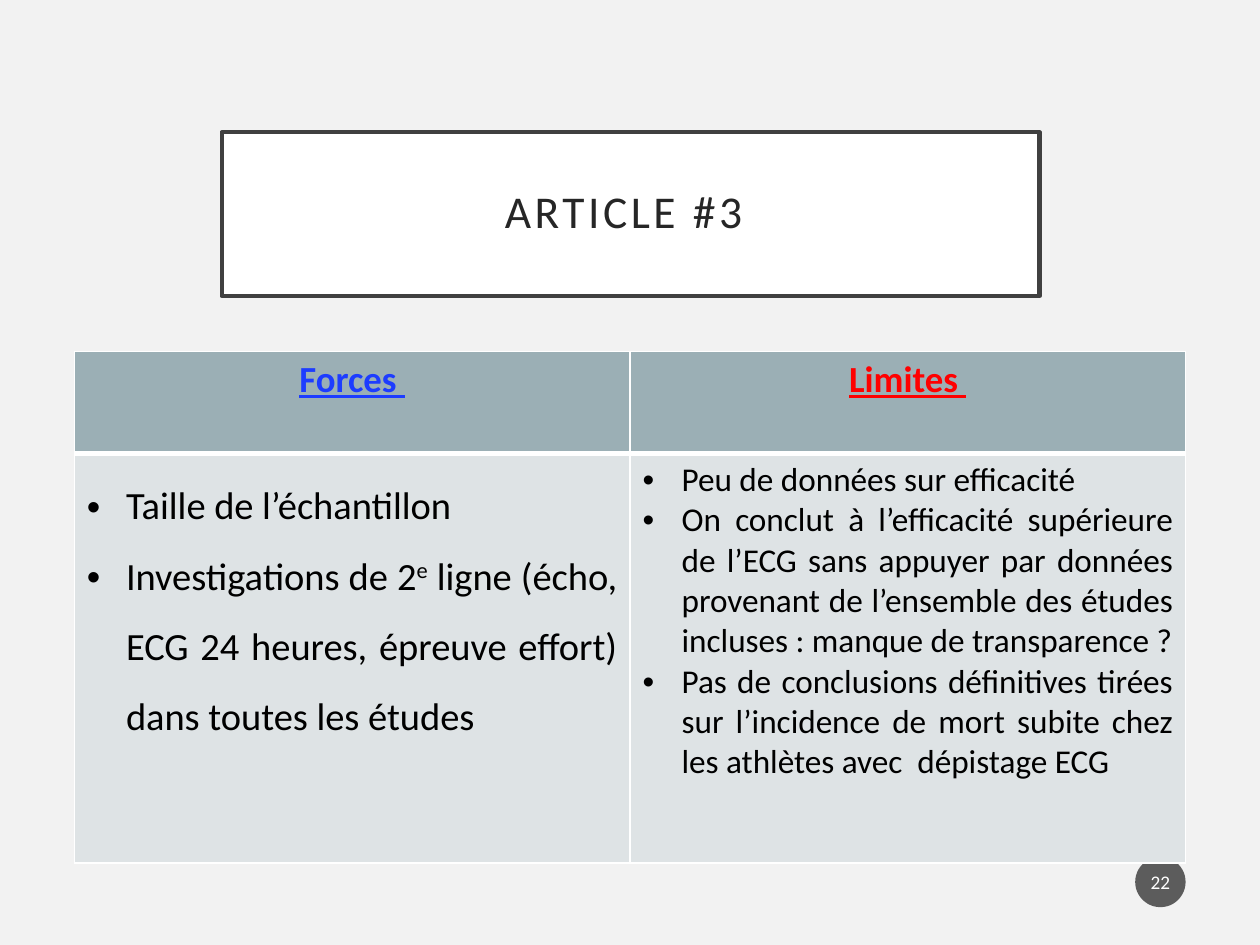
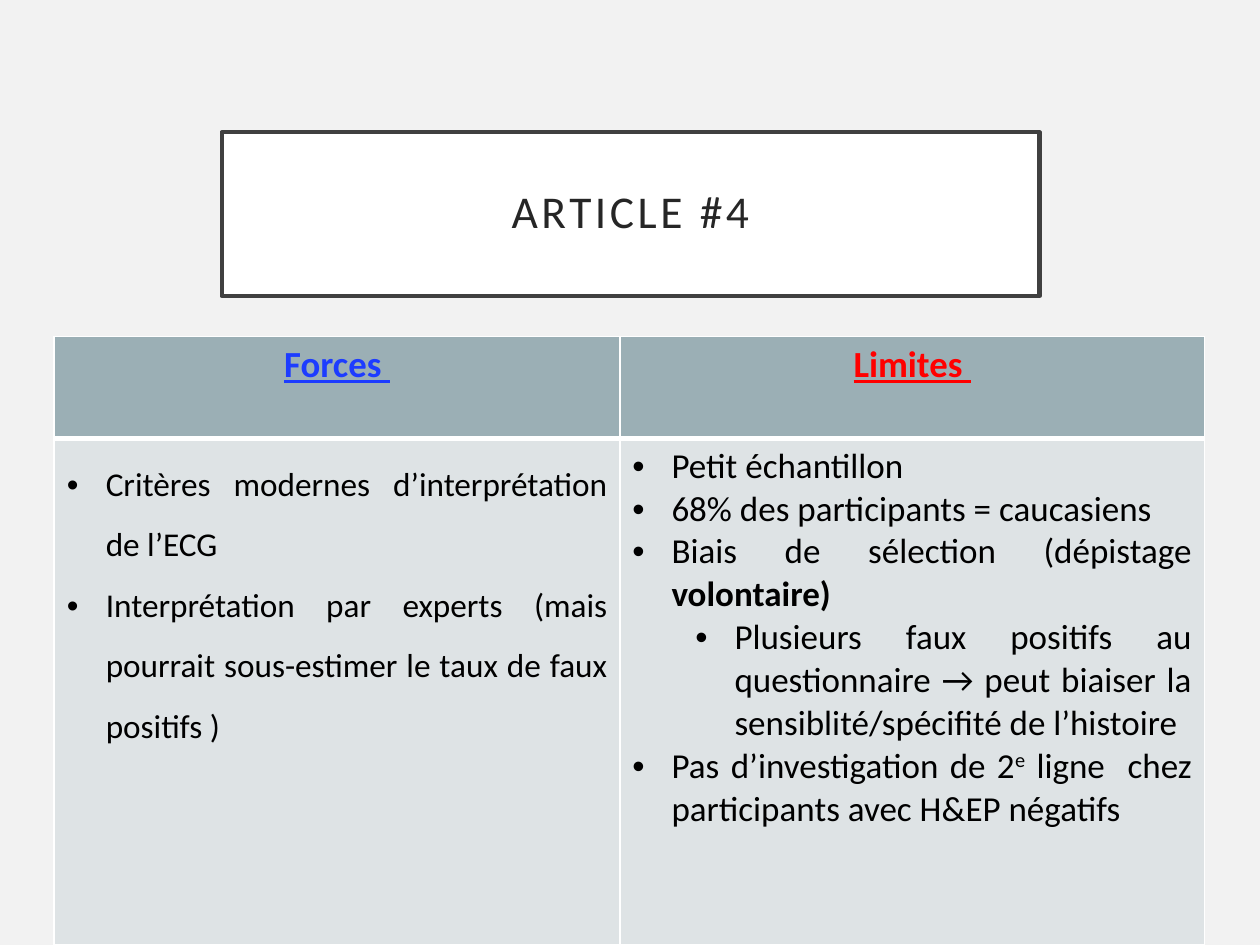
from dataclasses import dataclass

from lxml import etree
from pptx import Presentation
from pptx.dml.color import RGBColor
from pptx.enum.shapes import MSO_SHAPE
from pptx.enum.text import MSO_ANCHOR, PP_ALIGN
from pptx.oxml.ns import qn
from pptx.util import Inches, Pt

RECTANGLE, OVAL = MSO_SHAPE.RECTANGLE, MSO_SHAPE.OVAL
MIDDLE = MSO_ANCHOR.MIDDLE
CENTER, JUSTIFY = PP_ALIGN.CENTER, PP_ALIGN.JUSTIFY


@dataclass(frozen=True)
class Theme:
    font: str = "Calibri"
    background: str = "F2F2F2"
    white: str = "FFFFFF"
    frame: str = "404040"
    title: str = "262626"
    badge: str = "1D1D1D"
    header_fill: str = "9BAFB5"
    body_fill: str = "DEE3E5"
    body_text: str = "000000"
    strengths: str = "1D3CFF"
    limits: str = "FF0000"
    title_size: int = 26
    heading_size: int = 21
    badge_size: int = 11


THEME = Theme()
HEADINGS = [("Forces ", THEME.strengths), ("Limites ", THEME.limits)]
HEADER_HEIGHT = 0.81
INDENT = 0.31
# Top and bottom border widths of the header row and the body row
ROW_BORDERS = [(1, 3), (3, 1)]


def style_run(run, size, color, bold=False):
    run.font.name = THEME.font
    run.font.size = Pt(size)
    run.font.bold = bold
    run.font.color.rgb = RGBColor.from_string(color)


def style_cell(cell, fill, top, bottom):
    properties = cell._tc.get_or_add_tcPr()
    for side, width in (("L", 1), ("R", 1), ("T", top), ("B", bottom)):
        border = etree.SubElement(properties, qn(f"a:ln{side}"), w=str(Pt(width)))
        solid = etree.SubElement(border, qn("a:solidFill"))
        etree.SubElement(solid, qn("a:srgbClr"), val=THEME.white)
    cell.fill.solid()
    cell.fill.fore_color.rgb = RGBColor.from_string(fill)


# Each column: text size, line spacing, then bullets as (level, runs);
# a run is its text and an optional style
articles = [
    {
        "title": "ARTICLE #3 ",
        "page": "22",
        "left": 0.59, "top": 2.79, "widths": (4.41, 4.41), "body_height": 3.25,
        "columns": [
            (22, 1.5, [
                (0, [("Taille de l’échantillon", "")]),
                (0, [("Investigations de 2", ""), ("e", "super"),
                     (" ligne (écho, ECG 24 heures, épreuve effort) dans toutes les études", "")]),
            ]),
            (19, 1.0, [
                (0, [("Peu de données sur efficacité", "")]),
                (0, [("On conclut à l’efficacité supérieure de l’ECG sans appuyer par données "
                      "provenant de l’ensemble des études incluses : manque de transparence ?", "")]),
                (0, [("Pas de conclusions définitives tirées sur l’incidence de mort subite "
                      "chez les athlètes avec  dépistage ECG", "")]),
            ]),
        ],
    },
    {
        "title": "ARTICLE #4",
        "page": None,
        "left": 0.43, "top": 2.67, "widths": (4.49, 4.64), "body_height": 4.02,
        "columns": [
            (19, 1.5, [
                (0, [("Critères modernes d’interprétation de l’ECG", "")]),
                (0, [("Interprétation par experts (mais pourrait sous-estimer le taux "
                      "de faux positifs )", "")]),
            ]),
            (20, 1.0, [
                (0, [("Petit échantillon", "")]),
                (0, [("68% des participants = caucasiens", "")]),
                (0, [("Biais de sélection (dépistage ", ""), ("volontaire)", "bold")]),
                (1, [("Plusieurs faux positifs au questionnaire → peut biaiser la "
                      "sensiblité/spécifité de l’histoire", "")]),
                (0, [("Pas d’investigation de 2", ""), ("e", "super"),
                     (" ligne  chez participants avec H&EP négatifs", "")]),
            ]),
        ],
    },
]

deck = Presentation()
deck.slide_width, deck.slide_height = Inches(10), Inches(7.5)

for article in articles:
    slide = deck.slides.add_slide(deck.slide_layouts[6])
    slide.background.fill.solid()
    slide.background.fill.fore_color.rgb = RGBColor.from_string(THEME.background)

    # Framed title
    title = slide.shapes.add_shape(RECTANGLE, Inches(1.76), Inches(1.05), Inches(6.49), Inches(1.3))
    title.shadow.inherit = False
    title.fill.solid()
    title.fill.fore_color.rgb = RGBColor.from_string(THEME.white)
    title.line.color.rgb = RGBColor.from_string(THEME.frame)
    title.line.width = Pt(2.5)
    frame = title.text_frame
    frame.text = article["title"]
    frame.word_wrap = True
    frame.vertical_anchor = MIDDLE
    frame.margin_left = frame.margin_right = frame.margin_top = frame.margin_bottom = Inches(0.2)
    heading = frame.paragraphs[0]
    heading.alignment = CENTER
    heading.line_spacing = 0.9
    style_run(heading.runs[0], THEME.title_size, THEME.title)
    heading.runs[0].font._element.set("spc", "200")

    # Page number badge
    if article["page"]:
        badge = slide.shapes.add_shape(OVAL, Inches(9.01), Inches(6.8), Inches(0.4), Inches(0.4))
        badge.shadow.inherit = False
        badge.fill.solid()
        badge.fill.fore_color.rgb = RGBColor.from_string(THEME.badge)
        badge_color = next(badge._element.spPr.iter(qn("a:srgbClr")))
        etree.SubElement(badge_color, qn("a:alpha"), val="70000")
        badge.line.fill.background()
        badge.text_frame.text = article["page"]
        badge.text_frame.vertical_anchor = MIDDLE
        badge.text_frame.margin_left = badge.text_frame.margin_right = Inches(0.02)
        page = badge.text_frame.paragraphs[0]
        page.alignment = CENTER
        style_run(page.runs[0], THEME.badge_size, THEME.white)

    # Strengths and limits table
    appraisal = slide.shapes.add_table(
        2, 2, Inches(article["left"]), Inches(article["top"]),
        Inches(sum(article["widths"])), Inches(HEADER_HEIGHT + article["body_height"])).table
    appraisal.rows[0].height = Inches(HEADER_HEIGHT)
    appraisal.rows[1].height = Inches(article["body_height"])

    for col, (label, label_color) in enumerate(HEADINGS):
        appraisal.columns[col].width = Inches(article["widths"][col])

        # Column heading
        header = appraisal.cell(0, col)
        style_cell(header, THEME.header_fill, *ROW_BORDERS[0])
        header.text_frame.text = label
        header_line = header.text_frame.paragraphs[0]
        header_line.alignment = CENTER
        style_run(header_line.runs[0], THEME.heading_size, label_color, bold=True)
        header_line.runs[0].font.underline = True

        # Bulleted arguments
        body = appraisal.cell(1, col)
        style_cell(body, THEME.body_fill, *ROW_BORDERS[1])
        size, spacing, bullets = article["columns"][col]
        for index, (level, parts) in enumerate(bullets):
            argument = body.text_frame.add_paragraph() if index else body.text_frame.paragraphs[0]
            argument.alignment = JUSTIFY
            argument.level = level
            argument.line_spacing = spacing
            properties = argument._p.get_or_add_pPr()
            properties.set("marL", str(Inches(INDENT + 0.5 * level)))
            properties.set("indent", str(Inches(-INDENT)))
            etree.SubElement(properties, qn("a:buFont"), typeface="Arial")
            etree.SubElement(properties, qn("a:buChar"), char="•")
            for text, style in parts:
                run = argument.add_run()
                run.text = text
                style_run(run, size, THEME.body_text, bold=style == "bold")
                if style == "super":
                    run.font._element.set("baseline", "30000")

deck.save("out.pptx")
